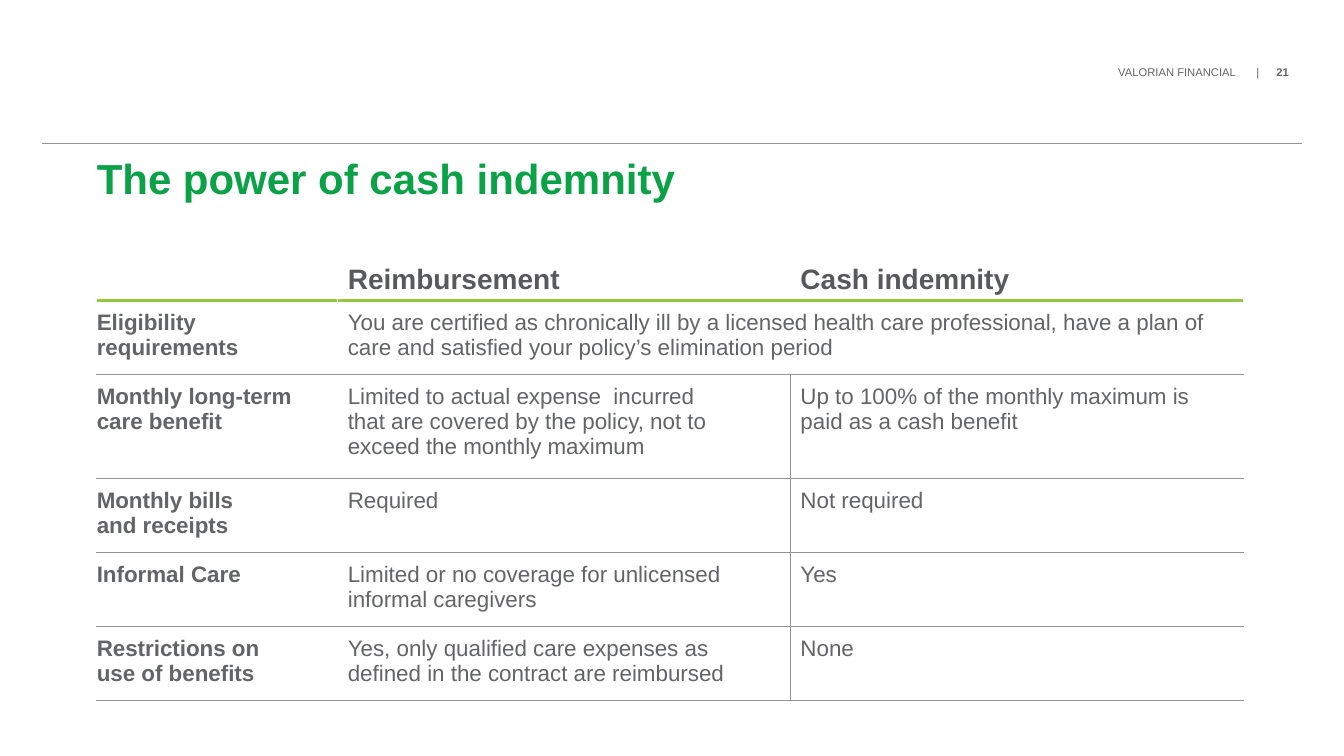
from lxml import etree
from pptx import Presentation
from pptx.dml.color import RGBColor
from pptx.enum.shapes import MSO_CONNECTOR
from pptx.enum.text import MSO_ANCHOR
from pptx.oxml.ns import qn
from pptx.util import Pt

PX = 9144
FONT = "Arial"
STRAIGHT = MSO_CONNECTOR.STRAIGHT
BOTTOM = MSO_ANCHOR.BOTTOM
TOP = MSO_ANCHOR.TOP

GREEN = RGBColor(0x0A, 0xA1, 0x47)
LIME = RGBColor(0x95, 0xC9, 0x3C)
DARK = RGBColor(0x58, 0x59, 0x5B)
GRAY = RGBColor(0x63, 0x64, 0x66)
RULE = RGBColor(0x92, 0x94, 0x97)
GRID = RGBColor(0x92, 0x93, 0x97)
WHITE = RGBColor(0xFF, 0xFF, 0xFF)

NO_EDGE = (None, 0)
WHITE_EDGE = (WHITE, 1)
GRID_EDGE = (GRID, 0.5)
LIME_EDGE = (LIME, 3)

COL_WIDTHS = [239, 449, 449]
ROW_HEIGHTS = [60, 68, 103, 60, 60, 60]
ROWS = [
    ["", "Reimbursement", "Cash indemnity"],
    ["Eligibility requirements",
     "You are certified as chronically ill by a licensed health care professional, "
     "have a plan of care and satisfied your policy’s elimination period", ""],
    ["Monthly long-term care benefit",
     "Limited to actual expense  incurred\vthat are covered by the policy, "
     "not to exceed the monthly maximum",
     "Up to 100% of the monthly maximum is paid as a cash benefit"],
    ["Monthly bills\vand receipts", "Required", "Not required"],
    ["Informal Care",
     "Limited or no coverage for unlicensed informal caregivers", "Yes"],
    ["Restrictions on\vuse of benefits",
     "Yes, only qualified care expenses as defined in the contract are reimbursed",
     "None"],
]


def px(n):
    return round(n * PX)


def style(r, size, color, bold):
    r.font.name = FONT
    r.font.size = Pt(size)
    r.font.color.rgb = color
    r.font.bold = bold


def add_text(slide, x, y, w, h):
    tf = slide.shapes.add_textbox(px(x), px(y), px(w), px(h)).text_frame
    tf.word_wrap = True
    tf.margin_left = tf.margin_top = tf.margin_right = tf.margin_bottom = 0
    return tf.paragraphs[0]


def add_page_label(slide, x, y, w, h):
    p = add_text(slide, x, y, w, h)
    tabs = etree.SubElement(p._p.get_or_add_pPr(), qn("a:tabLst"))
    for stop in (137, 157):
        etree.SubElement(tabs, qn("a:tab"), pos=str(px(stop)), algn="l")
    for text, bold in (("VALORIAN FINANCIAL\t|\t", False), ("21", True)):
        r = p.add_run()
        r.text = text
        style(r, 8, GRAY, bold)


def add_rule(slide, x, y, w):
    line = slide.shapes.add_connector(STRAIGHT, px(x), px(y), px(x + w), px(y))
    line.line.color.rgb = RULE
    line.line.width = Pt(0.5)
    etree.SubElement(line._element.spPr, qn("a:effectLst"))


def add_title(slide, x, y, w, h):
    p = add_text(slide, x, y, w, h)
    p.text = "The power of cash indemnity"
    p.line_spacing = Pt(31)
    style(p.runs[0], 30, GREEN, True)


def set_borders(cell, *edges):
    tc_pr = cell._tc.get_or_add_tcPr()
    for i, (side, (color, width)) in enumerate(zip("LRTB", edges)):
        ln = etree.Element(qn("a:ln" + side), w=str(Pt(width)))
        if color is None:
            etree.SubElement(ln, qn("a:noFill"))
        else:
            fill = etree.SubElement(ln, qn("a:solidFill"))
            etree.SubElement(fill, qn("a:srgbClr"), val=str(color))
        tc_pr.insert(i, ln)


def cell_edges(row, col):
    if row == 0:
        return NO_EDGE, NO_EDGE, NO_EDGE, LIME_EDGE
    divided = row > 1
    left = GRID_EDGE if divided and col == 2 else WHITE_EDGE
    right = GRID_EDGE if divided and col == 1 else WHITE_EDGE
    return left, right, GRID_EDGE if divided else LIME_EDGE, GRID_EDGE


def fill_cell(cell, row, col, text):
    header = row == 0
    cell.fill.background()
    set_borders(cell, *cell_edges(row, col))
    cell.vertical_anchor = BOTTOM if header else TOP
    cell.margin_left = px(0 if col == 0 else 10)
    cell.margin_right = px(10)
    cell.margin_top = cell.margin_bottom = px(5 if header else 10)
    if text:
        cell.text = text
        for r in cell.text_frame.paragraphs[0].runs:
            style(r, 20 if header else 16, DARK if header else GRAY,
                  header or col == 0)


def add_comparison(slide, x, y):
    table = slide.shapes.add_table(
        len(ROWS), len(COL_WIDTHS), px(x), px(y),
        px(sum(COL_WIDTHS)), px(sum(ROW_HEIGHTS))).table
    table.horz_banding = False
    for column, width in zip(table.columns, COL_WIDTHS):
        column.width = px(width)
    for row, height in zip(table.rows, ROW_HEIGHTS):
        row.height = px(height)
    for i, texts in enumerate(ROWS):
        for j, text in enumerate(texts):
            fill_cell(table.cell(i, j), i, j, text)
    table.cell(1, 1).merge(table.cell(1, 2))


def main():
    prs = Presentation()
    prs.slide_width, prs.slide_height = px(1333), px(750)
    slide = prs.slides.add_slide(prs.slide_layouts[6])
    add_page_label(slide, 1109, 65, 175, 15)
    add_rule(slide, 42, 142, 1249)
    add_title(slide, 96, 158, 1068, 61)
    add_comparison(slide, 96, 238)
    prs.save("out.pptx")


if __name__ == "__main__":
    main()
